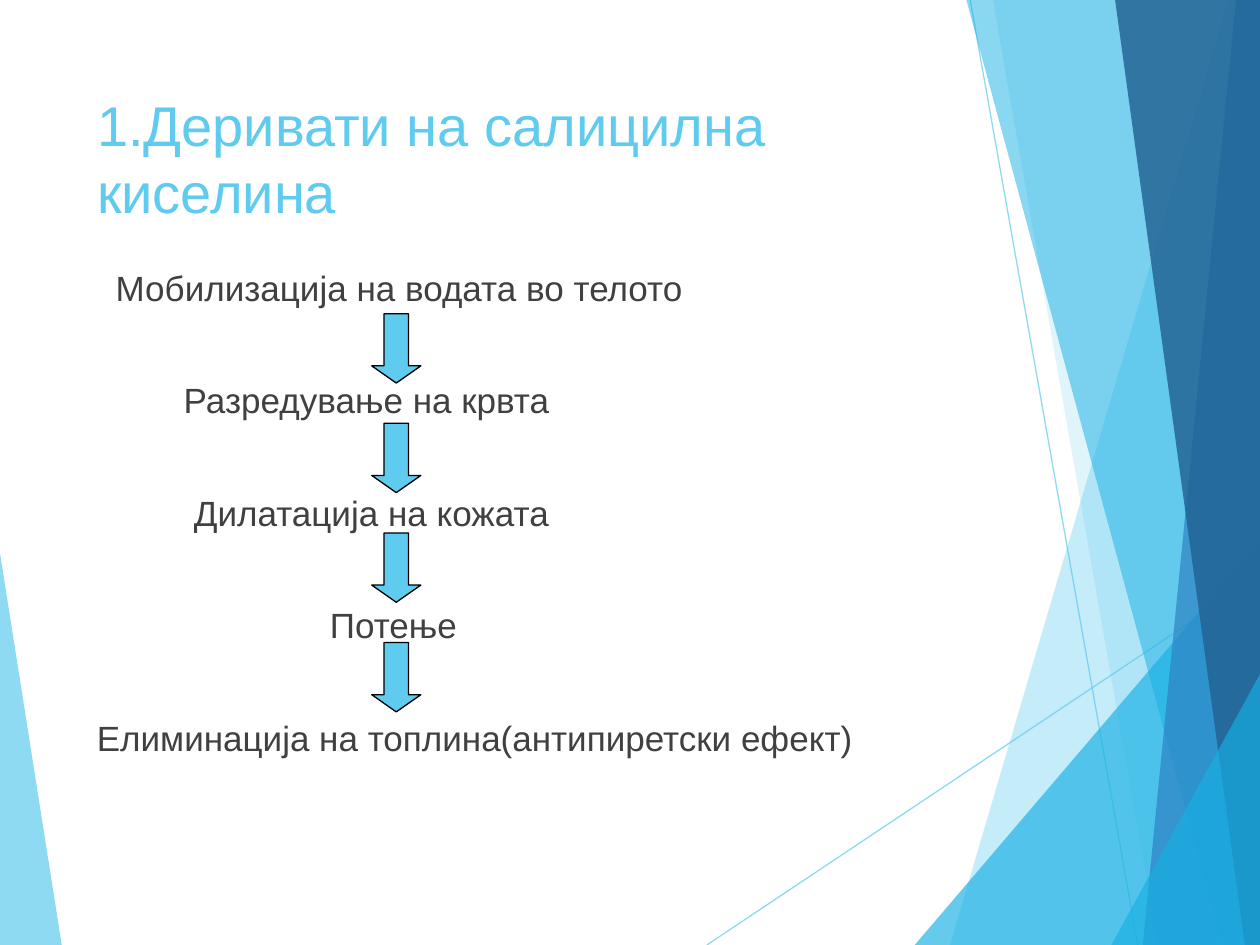
from lxml.etree import SubElement
from pptx import Presentation
from pptx.dml.color import RGBColor
from pptx.enum.shapes import MSO_CONNECTOR, MSO_SHAPE
from pptx.enum.text import MSO_ANCHOR, PP_ALIGN
from pptx.oxml.ns import qn
from pptx.util import Inches, Pt

SKY = RGBColor(0x5F, 0xCB, 0xEF)
CYAN = RGBColor(0x17, 0xB0, 0xE4)
BLUE = RGBColor(0x2E, 0x83, 0xC3)
NAVY = RGBColor(0x22, 0x62, 0x92)
GREY = RGBColor(0x40, 0x40, 0x40)
BLACK = RGBColor(0, 0, 0)
FONT = "Arial"
WIDTH, HEIGHT = 10, 7.5

TITLE = "1.Деривати на салицилна киселина"
# Step, left indent in inches
STEPS = [
    ("Мобилизација на водата во телото", 0.15),
    ("Разредување на крвта", 0.69),
    ("Дилатација на кожата", 0.77),
    ("Потење", 1.85),
    ("Елиминација на топлина(антипиретски ефект)", 0),
]
ARROW_TOP, ARROW_PITCH = 2.49, 0.87

# Colour, opacity in percent, corners; back to front
LEFT_FACET = (SKY, 70, [(0, 4.39), (0.49, HEIGHT), (0, HEIGHT)])
RIGHT_FACETS = [
    (SKY, 36, [(9.75, 0), (7.54, HEIGHT), (WIDTH, HEIGHT), (WIDTH, 0)]),
    (SKY, 20, [(7.88, 0), (9.19, HEIGHT), (WIDTH, HEIGHT), (WIDTH, 0)]),
    (CYAN, 66, [(7.26, HEIGHT), (WIDTH, 4.29), (WIDTH, HEIGHT)]),
    (CYAN, 50, [(7.67, 0), (9.7, HEIGHT), (WIDTH, HEIGHT), (WIDTH, 0)]),
    (BLUE, 70, [(9.81, 0), (9.07, HEIGHT), (WIDTH, HEIGHT), (WIDTH, 0)]),
    (NAVY, 82, [(8.85, 0), (9.88, HEIGHT), (WIDTH, HEIGHT), (WIDTH, 0)]),
    (CYAN, 66, [(8.82, HEIGHT), (WIDTH, 5.35), (WIDTH, HEIGHT)]),
]
RAYS = [((5.61, HEIGHT), (WIDTH, 4.57)), ((7.7, 0), (9.03, HEIGHT))]
RAY_OPACITY = 70


def set_opacity(shape, percent):
    """Make the first solid colour of the shape translucent."""
    colour = next(shape.element.spPr.iter(qn("a:srgbClr")))
    SubElement(colour, qn("a:alpha")).set("val", str(percent * 1000))


def add_facet(slide, colour, opacity, corners):
    points = [(Inches(x), Inches(y)) for x, y in corners]
    builder = slide.shapes.build_freeform(*points[0])
    builder.add_line_segments(points[1:], close=True)
    facet = builder.convert_to_shape()
    facet.shadow.inherit = False
    facet.fill.solid()
    facet.fill.fore_color.rgb = colour
    facet.line.fill.background()
    set_opacity(facet, opacity)


def add_ray(slide, start, end):
    ray = slide.shapes.add_connector(
        MSO_CONNECTOR.STRAIGHT, *(Inches(v) for v in start + end))
    ray.line.color.rgb = SKY
    ray.line.width = Pt(0.75)
    set_opacity(ray, RAY_OPACITY)
    SubElement(ray.element.spPr, qn("a:effectLst"))


def format_text(paragraph, size, colour):
    for run in paragraph.runs:
        run.font.name = FONT
        run.font.size = Pt(size)
        run.font.color.rgb = colour


def add_title(slide):
    title = slide.shapes.title
    slide.shapes.element.append(title.element)  # in front of the facets
    title.left, title.top = Inches(0.67), Inches(0.67)
    title.width, title.height = Inches(6.94), Inches(1.44)
    title.text_frame.text = TITLE
    title.text_frame.word_wrap = True
    title.text_frame.vertical_anchor = MSO_ANCHOR.TOP
    heading = title.text_frame.paragraphs[0]
    heading.alignment = PP_ALIGN.LEFT
    format_text(heading, 32, SKY)


def add_steps(slide):
    steps = slide.shapes.add_textbox(
        Inches(0.67), Inches(2.1), Inches(7.8), Inches(5.18)).text_frame
    steps.word_wrap = True
    for i, (wording, indent) in enumerate(STEPS):
        step = steps.add_paragraph() if i else steps.paragraphs[0]
        step.text = wording
        step.alignment = PP_ALIGN.JUSTIFY
        step.line_spacing = 0.9
        step.space_before = Pt(42.7 if i else 0)
        step._p.get_or_add_pPr().set("marL", str(Inches(indent)))
        format_text(step, 20, GREY)


def add_arrows(slide):
    for i in range(len(STEPS) - 1):
        arrow = slide.shapes.add_shape(
            MSO_SHAPE.DOWN_ARROW, Inches(2.95),
            Inches(ARROW_TOP + i * ARROW_PITCH), Inches(0.39), Inches(0.55))
        arrow.adjustments[0] = 0.5
        arrow.adjustments[1] = 0.35
        arrow.shadow.inherit = False
        arrow.fill.solid()
        arrow.fill.fore_color.rgb = SKY
        arrow.line.color.rgb = BLACK
        arrow.line.width = Pt(0.75)


def main():
    deck = Presentation()
    deck.slide_width, deck.slide_height = Inches(WIDTH), Inches(HEIGHT)
    slide = deck.slides.add_slide(deck.slide_layouts[5])
    add_facet(slide, *LEFT_FACET)
    for start, end in RAYS:
        add_ray(slide, start, end)
    for facet in RIGHT_FACETS:
        add_facet(slide, *facet)
    add_title(slide)
    add_steps(slide)
    add_arrows(slide)
    deck.save("out.pptx")


if __name__ == "__main__":
    main()
